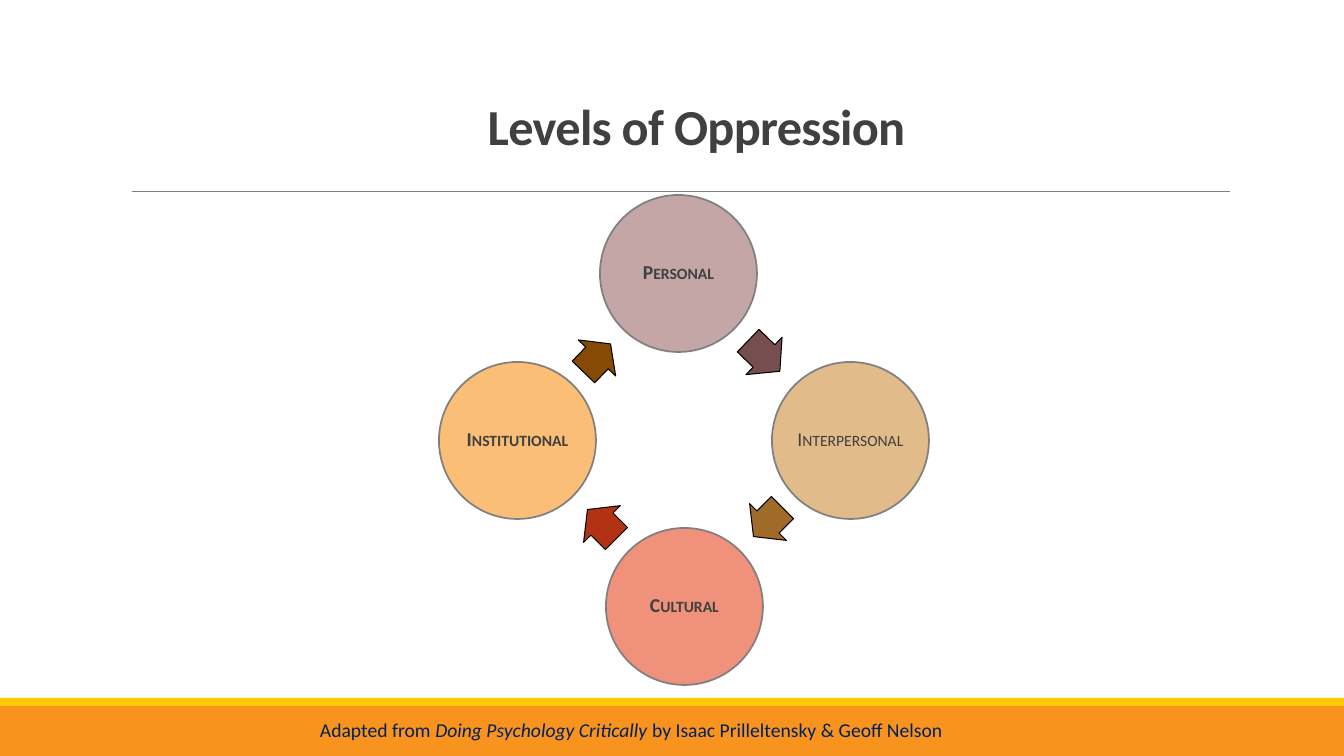
from lxml import etree
from pptx import Presentation
from pptx.dml.color import RGBColor
from pptx.enum.shapes import MSO_CONNECTOR, MSO_SHAPE
from pptx.enum.text import MSO_ANCHOR, MSO_AUTO_SIZE, PP_ALIGN
from pptx.oxml.ns import qn
from pptx.util import Emu, Pt

RECT, OVAL, ARROW = MSO_SHAPE.RECTANGLE, MSO_SHAPE.OVAL, MSO_SHAPE.RIGHT_ARROW
STRAIGHT = MSO_CONNECTOR.STRAIGHT
LEFT, CENTER = PP_ALIGN.LEFT, PP_ALIGN.CENTER
TOP, MIDDLE, BOTTOM = MSO_ANCHOR.TOP, MSO_ANCHOR.MIDDLE, MSO_ANCHOR.BOTTOM
GROW = MSO_AUTO_SIZE.SHAPE_TO_FIT_TEXT

EMU_PER_PX = 914400 / 100.8
FONT = "Calibri"
COLORS = {
    "orange": "F8931D", "yellow": "FFCA08", "gray": "808080",
    "text": "404040", "navy": "002060", "black": "000000",
    "mauve": "C4A6A6", "plum": "764E4E",
    "tan": "E2BB8B", "brown": "A06A29",
    "coral": "F0917B", "rust": "B23214",
    "apricot": "FBBE77", "umber": "864A04",
}


def px(length):
    return Emu(round(length * EMU_PER_PX))


def color(name):
    return RGBColor.from_string(COLORS[name])


class SlideBuilder:
    """Holds the slide and draws each kind of element on it."""

    def __init__(self, slide):
        self.shapes = slide.shapes

    def shape(self, kind, box, fill, line=None, weight=1.0):
        shape = self.shapes.add_shape(kind, *map(px, box))
        shape.shadow.inherit = False
        shape.fill.solid()
        shape.fill.fore_color.rgb = color(fill)
        if line:
            shape.line.color.rgb = color(line)
            shape.line.width = Pt(weight)
        else:
            shape.line.fill.background()
        return shape

    def rule(self, x1, x2, y, line, weight):
        rule = self.shapes.add_connector(STRAIGHT, px(x1), px(y), px(x2), px(y))
        rule.line.color.rgb = color(line)
        rule.line.width = Pt(weight)
        etree.SubElement(rule._element.spPr, qn("a:effectLst"))

    def add_runs(self, frame, runs, size, ink, align=LEFT, anchor=TOP, spacing=1.0):
        """Each run is a tuple: text, bold, italic, extra run attributes."""
        frame.vertical_anchor = anchor
        paragraph = frame.paragraphs[0]
        paragraph.alignment = align
        paragraph.line_spacing = spacing
        for text, bold, italic, extras in runs:
            run = paragraph.add_run()
            run.text = text
            font = run.font
            font.name, font.size = FONT, Pt(size)
            font.bold, font.italic = bold, italic
            font.color.rgb = color(ink)
            for key, value in extras.items():
                run._r.get_or_add_rPr().set(key, value)

    def text(self, box, runs, size, ink, **layout):
        frame = self.shapes.add_textbox(*map(px, box)).text_frame
        frame.word_wrap = True
        self.add_runs(frame, runs, size, ink, **layout)
        return frame

    def level(self, name, left, top, fill, bold):
        circle = self.shape(OVAL, (left, top, 157, 157), fill, "gray", 1.25)
        frame = circle.text_frame
        frame.word_wrap = False
        frame.margin_left = frame.margin_right = px(2)
        frame.margin_top = frame.margin_bottom = px(2)
        self.add_runs(frame, [(name, bold, False, {"cap": "small"})], 14, "text",
                      align=CENTER, anchor=MIDDLE, spacing=0.9)

    def arrow(self, center_x, center_y, width, angle, fill):
        height = 52
        box = (center_x - width / 2, center_y - height / 2, width, height)
        arrow = self.shape(ARROW, box, fill, "black", 0.75)
        arrow.adjustments[0] = 0.6
        arrow.adjustments[1] = 0.5
        arrow.rotation = angle


def main():
    deck = Presentation()
    deck.slide_width, deck.slide_height = px(1344), px(756)
    builder = SlideBuilder(deck.slides.add_slide(deck.slide_layouts[6]))

    # Footer bands and title rule
    builder.shape(RECT, (0, 706, 1344, 50), "orange")
    builder.shape(RECT, (0, 698, 1344, 8), "yellow")
    builder.rule(132, 1230, 191, "gray", 0.5)

    # Title and credit
    builder.text((129, 72, 1135, 89),
                 [("Levels of Oppression", True, False, {"spc": "-50"})],
                 36, "text", align=CENTER, anchor=BOTTOM, spacing=0.85)
    credit = builder.text((310, 713, 658, 34), [
        ("Adapted from ", False, False, {}),
        ("Doing Psychology Critically ", False, True, {}),
        ("by Isaac Prilleltensky & Geoff Nelson", False, False, {}),
    ], 14, "navy")
    credit.auto_size = GROW

    # Cycle: each level, then the arrow to the next one
    cycle = [
        (("Personal", 600, 195, "mauve", True), (764, 356, 44, 44, "plum")),
        (("Interpersonal", 772, 362, "tan", False), (768, 522, 41, 135, "brown")),
        (("Cultural", 606, 528, "coral", True), (602, 524, 41, 225, "rust")),
        (("Institutional", 439, 362, "apricot", True), (597, 358, 39, 314, "umber")),
    ]
    for level, arrow in cycle:
        builder.level(*level)
        builder.arrow(*arrow)

    deck.save("out.pptx")


if __name__ == "__main__":
    main()
